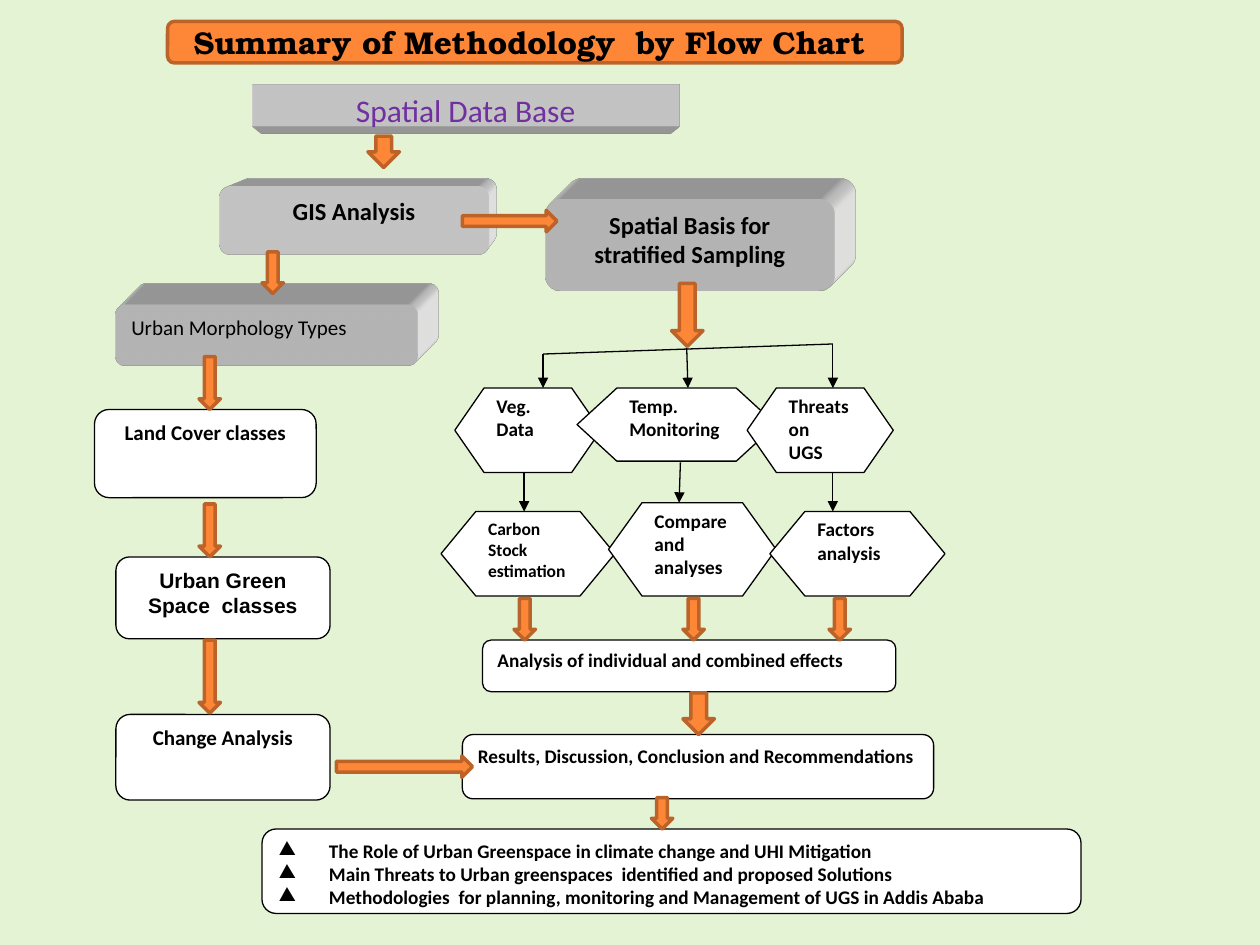
from lxml import etree
from pptx import Presentation
from pptx.dml.color import RGBColor
from pptx.enum import shapes, text
from pptx.oxml import parse_xml
from pptx.oxml.ns import nsdecls, qn
from pptx.util import Inches, Pt

KIND = shapes.MSO_SHAPE
CENTER, LEFT = text.PP_ALIGN.CENTER, text.PP_ALIGN.LEFT
BLACK, WHITE, ORANGE, RUST = "000000", "FFFFFF", "FE8637", "BC6329"


def color(value):
    return RGBColor.from_string(value)


def add_box(kind, at, fill, line, width, lines=(), size=11, align=LEFT,
            font="Calibri", ink=BLACK, bold=True):
    box = slide.shapes.add_shape(kind, *(Inches(v) for v in at))
    box.shadow.inherit = False
    box.fill.solid()
    box.fill.fore_color.rgb = color(fill)
    if line:
        box.line.color.rgb = color(line)
        box.line.width = Pt(width)
    else:
        box.line.fill.background()
    frame = box.text_frame
    frame.word_wrap = True
    frame.vertical_anchor = text.MSO_ANCHOR.TOP
    for i, words in enumerate(lines):
        paragraph = frame.paragraphs[0] if i == 0 else frame.add_paragraph()
        paragraph.alignment = align
        run = paragraph.add_run()
        run.text = words
        run.font.size = Pt(size)
        run.font.name = font
        run.font.bold = bold
        run.font.color.rgb = color(ink)
    return box


prs = Presentation()
prs.slide_width, prs.slide_height = Inches(10), Inches(7.5)
slide = prs.slides.add_slide(prs.slide_layouts[6])
slide.background.fill.solid()
slide.background.fill.fore_color.rgb = color("E4F3D3")

# Extruded blocks: data sources and sampling basis
blocks = [
    (KIND.ROUNDED_RECTANGLE, (1.74, 1.48, 2.14, 0.54), "GIS Analysis",
     14, CENTER, BLACK, True, "legacyPerspectiveTopRight", "legacyFlat3"),
    (KIND.RECTANGLE, (2, 0.67, 3.39, 0.33), "Spatial Data Base",
     18, CENTER, "7030A0", False, "legacyPerspectiveBottom", "legacyFlat3"),
    (KIND.ROUNDED_RECTANGLE, (4.33, 1.58, 2.29, 0.73),
     "Spatial Basis for stratified Sampling",
     14, CENTER, BLACK, True, "legacyObliqueTopRight", "legacyFlat3"),
    (KIND.ROUNDED_RECTANGLE, (0.92, 2.42, 2.39, 0.48), "Urban Morphology Types",
     12, LEFT, BLACK, False, "legacyObliqueTopRight", "legacyFlat3"),
]
for kind, at, words, size, align, ink, bold, camera, light in blocks:
    block = add_box(kind, at, WHITE, None, 0, [words], size, align,
                    ink=ink, bold=bold)
    properties = block._element.spPr
    properties.append(parse_xml(
        f'<a:scene3d {nsdecls("a")}><a:camera prst="{camera}"/>'
        f'<a:lightRig rig="{light}" dir="b"/></a:scene3d>'))
    properties.append(parse_xml(
        f'<a:sp3d {nsdecls("a")} extrusionH="430200" prstMaterial="legacyMatte">'
        '<a:bevelT w="13500" h="13500" prst="angle"/>'
        '<a:bevelB w="13500" h="13500" prst="angle"/>'
        '<a:extrusionClr><a:srgbClr val="FFFFFF"/></a:extrusionClr></a:sp3d>'))

# Land cover steps and results
steps = [
    ((0.75, 3.25, 1.76, 0.7), "Land Cover classes", 12, CENTER, "Calibri"),
    ((0.92, 4.42, 1.7, 0.65), "Urban Green Space  classes", 12, CENTER, "Arial"),
    ((0.92, 5.67, 1.7, 0.68), "Change Analysis", 12, CENTER, "Calibri"),
    ((3.67, 5.83, 3.74, 0.51),
     "Results, Discussion, Conclusion and Recommendations", 11, LEFT, "Calibri"),
    ((3.83, 5.08, 3.28, 0.41),
     "Analysis of individual and combined effects", 11, LEFT, "Calibri"),
]
for at, words, size, align, font in steps:
    add_box(KIND.ROUNDED_RECTANGLE, at, WHITE, BLACK, 0.75, [words], size, align, font)

# Final outcomes, bulleted
outcomes = add_box(KIND.ROUNDED_RECTANGLE, (2.08, 6.58, 6.5, 0.67), WHITE, BLACK, 0.75, [
    "The Role of Urban Greenspace in climate change and UHI Mitigation",
    "Main Threats to Urban greenspaces  identified and proposed Solutions",
    "Methodologies  for planning, monitoring and Management of UGS in Addis Ababa",
])
for paragraph in outcomes.text_frame.paragraphs:
    layout = paragraph._p.get_or_add_pPr()
    layout.set("marL", str(Inches(0.4)))
    layout.set("indent", str(-Inches(0.4)))
    etree.SubElement(layout, qn("a:buChar")).set("char", "▲")

# Field studies and their analyses
studies = [
    ((3.61, 3.08, 1.16, 0.67), ["Veg. Data"], 11),
    ((4.58, 3.08, 1.58, 0.58), ["Temp. Monitoring"], 11),
    ((5.93, 3.08, 1.16, 0.67), ["Threats on", "UGS"], 11),
    ((3.5, 4.06, 1.38, 0.67), ["Carbon Stock estimation"], 10),
    ((4.83, 3.99, 1.33, 0.74), ["Compare and analyses"], 11),
    ((6.11, 4.06, 1.39, 0.67), ["Factors analysis"], 11),
]
for at, lines, size in studies:
    add_box(KIND.FLOWCHART_PREPARATION, at, WHITE, BLACK, 0.75, lines, size)

# Thin branches: x1, y1, x2, y2, arrowhead
branches = [
    (4.31, 2.81, 6.61, 2.73, False),
    (4.31, 2.81, 4.31, 3.08, True),
    (5.45, 2.76, 5.46, 3.08, True),
    (6.61, 2.73, 6.61, 3.08, True),
    (4.16, 3.75, 4.16, 4.06, True),
    (5.4, 3.67, 5.39, 3.99, True),
    (6.61, 3.75, 6.61, 4.06, True),
]
for *ends, pointed in branches:
    branch = slide.shapes.add_connector(
        shapes.MSO_CONNECTOR.STRAIGHT, *(Inches(v) for v in ends))
    branch.line.color.rgb = color(BLACK)
    branch.line.width = Pt(0.75)
    if pointed:
        etree.SubElement(branch.line._get_or_add_ln(), qn("a:tailEnd")).set("type", "triangle")
    etree.SubElement(branch._element.spPr, qn("a:effectLst"))

# Block arrows
right_arrows = [(3.67, 1.67, 0.75, 0.17), (2.67, 6, 1.08, 0.17)]
down_arrows = [
    (1.58, 4, 0.17, 0.42), (1.58, 5.08, 0.17, 0.58), (5.17, 6.33, 0.17, 0.25),
    (2.08, 2, 0.17, 0.33), (1.58, 2.83, 0.17, 0.42),
    *((x, 4.75, 0.17, 0.33) for x in (4.08, 5.42, 6.58)),
    (2.92, 1.08, 0.25, 0.25), (5.33, 2.25, 0.25, 0.5), (5.42, 5.5, 0.25, 0.33),
]
for kind, places in ((KIND.RIGHT_ARROW, right_arrows), (KIND.DOWN_ARROW, down_arrows)):
    for at in places:
        add_box(kind, at, ORANGE, RUST, 2)

# Title
title = add_box(KIND.ROUNDED_RECTANGLE, (1.33, 0.17, 5.83, 0.33), ORANGE, RUST, 2,
                ["Summary of Methodology  by Flow Chart "], 18, CENTER, "TeX Gyre Bonum")
title.text_frame.vertical_anchor = text.MSO_ANCHOR.MIDDLE

prs.save("out.pptx")
